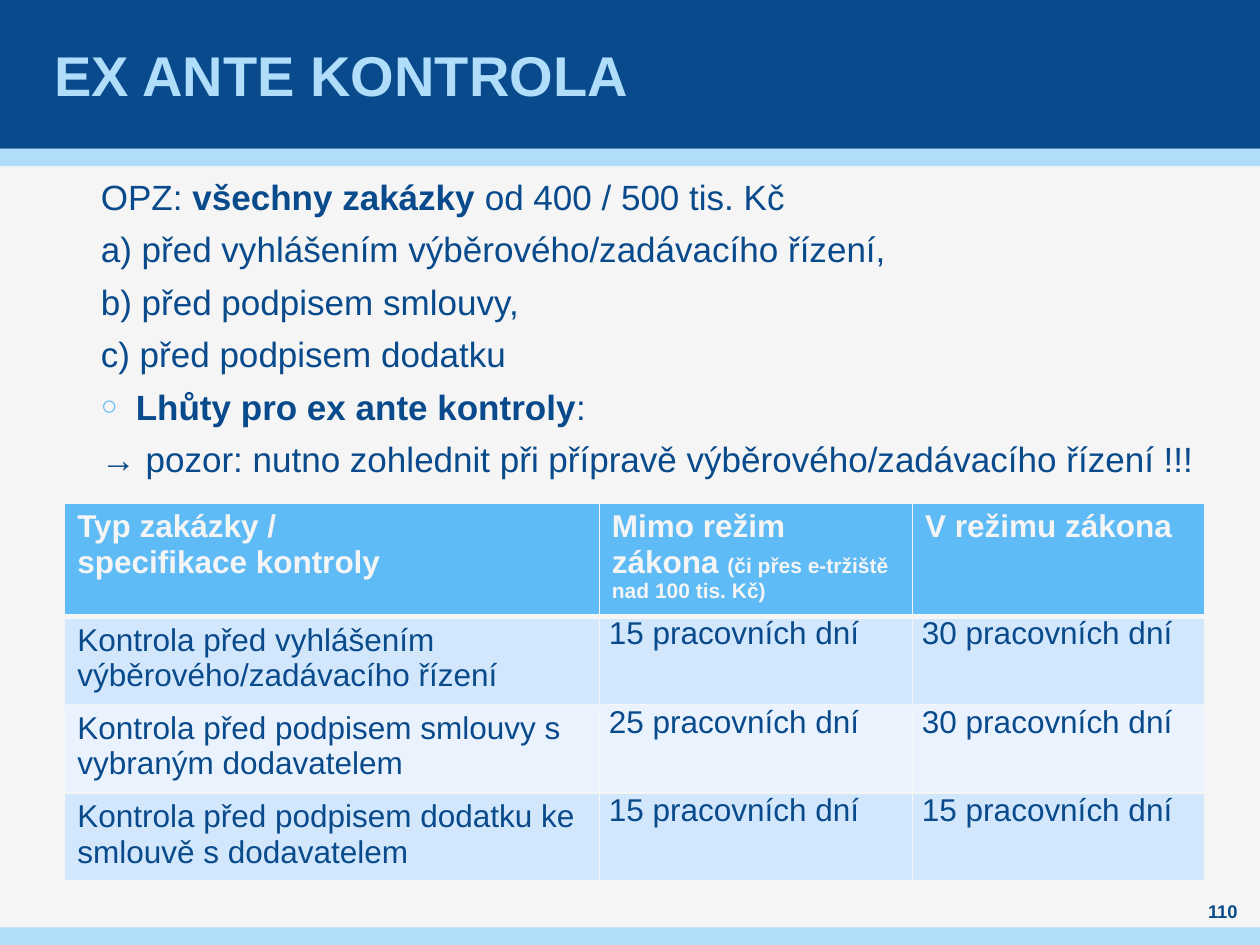
from lxml import etree
from pptx import Presentation
from pptx import util as u
from pptx.dml import color
from pptx.enum import shapes, text
from pptx.oxml import ns

Pt = u.Pt
NAVY, SKY, BLUE, PALE = "084A8B", "AFDDFA", "5FBBF5", "F5F5F5"


def rgb(value):
    return color.RGBColor.from_string(value)


def add_runs(paragraph, runs, shade):
    for content, size, bold in runs:
        run = paragraph.add_run()
        run.text = content
        run.font.color.rgb = rgb(shade)
        for name, value in {"name": "Arial", "size": Pt(size), "bold": bold}.items():
            setattr(run.font, name, value)


presentation = Presentation()
presentation.slide_width, presentation.slide_height = Pt(720), Pt(540)
slide = presentation.slides.add_slide(presentation.slide_layouts[6])
slide.background.fill.solid()
slide.background.fill.fore_color.rgb = rgb(PALE)

for top, height, fill in [(85, 10, SKY), (0, 85, NAVY), (530, 10, SKY)]:
    band = slide.shapes.add_shape(shapes.MSO_SHAPE.RECTANGLE, 0, Pt(top), Pt(720), Pt(height))
    band.shadow.inherit = False
    band.fill.solid()
    band.fill.fore_color.rgb = rgb(fill)
    band.line.fill.background()

body = [
    [("OPZ: ", 20, False), ("všechny zakázky ", 20, True), ("od 400 / 500 tis. Kč", 20, False)],
    [("a) před vyhlášením výběrového/zadávacího řízení,", 20, False)],
    [("b) před podpisem smlouvy,", 20, False)],
    [("c) před podpisem dodatku", 20, False)],
    [("Lhůty pro ex ante kontroly", 20, True), (":", 20, False)],
    [("→ pozor: nutno zohlednit při přípravě výběrového/zadávacího řízení !!!", 20, False)],
]
middle, upper = text.MSO_ANCHOR.MIDDLE, text.MSO_ANCHOR.TOP
left_align, center = text.PP_ALIGN.LEFT, text.PP_ALIGN.CENTER
body_format = {"line_spacing": Pt(24), "space_before": Pt(3), "space_after": Pt(3)}
boxes = [
    ((28, 0, 663, 85), 3, middle, left_align, SKY, {}, [[("EX ANTE KONTROLA", 32, True)]]),
    ((25.2, 100, 674.8, 170), 0, upper, left_align, NAVY, body_format, body),
    ((680.4, 513.4, 36.7, 14.4), 0, middle, center, NAVY, {}, [[("110", 10.5, True)]]),
]
for place, inset, anchor, align, shade, spacing, lines in boxes:
    box = slide.shapes.add_textbox(*map(Pt, place))
    frame = box.text_frame
    settings = {"word_wrap": True, "vertical_anchor": anchor, "margin_left": Pt(inset),
                "margin_right": Pt(inset), "margin_top": 0, "margin_bottom": 0}
    for name, value in settings.items():
        setattr(frame, name, value)
    for index, runs in enumerate(lines):
        paragraph = frame.paragraphs[0] if index == 0 else frame.add_paragraph()
        paragraph.alignment = align
        for name, value in spacing.items():
            setattr(paragraph, name, value)
        add_runs(paragraph, runs, shade)
        if lines is body:
            properties = paragraph._p.get_or_add_pPr()
            bulleted = index == 4
            properties.set("marL", str(Pt(52.4 if bulleted else 32.4)))
            properties.set("indent", str(Pt(-20 if bulleted else 0)))
            if bulleted:
                bullet_color = etree.SubElement(properties, ns.qn("a:buClr"))
                etree.SubElement(bullet_color, ns.qn("a:srgbClr"), val=BLUE)
                etree.SubElement(properties, ns.qn("a:buSzPct"), val="80000")
                etree.SubElement(properties, ns.qn("a:buFont"), typeface="Arial")
                etree.SubElement(properties, ns.qn("a:buChar"), char="○")

header = [
    [[("Typ zakázky /", 18, True)], [("specifikace kontroly", 18, True)]],
    [[("Mimo režim zákona ", 18, True), ("(či přes e-tržiště nad 100 tis. Kč)", 12, True)]],
    [[("V režimu zákona", 18, True)]],
]
deadlines = [
    ("Kontrola před vyhlášením výběrového/zadávacího řízení", 15, 30),
    ("Kontrola před podpisem smlouvy s vybraným dodavatelem", 25, 30),
    ("Kontrola před podpisem dodatku ke smlouvě s dodavatelem", 15, 15),
]
rows = [header]
for control, *days in deadlines:
    labels = [control] + [f"{count} pracovních dní" for count in days]
    rows.append([[[(label, 18, False)]] for label in labels])

widths, heights = [305.5, 179, 167], [60, 47.6, 47.6, 47.6]
table = slide.shapes.add_table(4, 3, Pt(37), Pt(287.4), Pt(sum(widths)), Pt(sum(heights))).table
for column, width in zip(table.columns, widths):
    column.width = Pt(width)
for row, height in zip(table.rows, heights):
    row.height = Pt(height)
fills = [BLUE, "D2E7FB", "EAF3FD", "D2E7FB"]
for row_index, row in enumerate(rows):
    for column_index, lines in enumerate(row):
        cell = table.cell(row_index, column_index)
        deadline = row_index > 0 and column_index > 0
        side, vertical = (5.4, 0) if deadline else (7.2, 3.6)
        margins = {"margin_left": side, "margin_right": side,
                   "margin_top": vertical, "margin_bottom": vertical}
        for name, value in margins.items():
            setattr(cell, name, Pt(value))
        for edge in ("lnL", "lnR", "lnT", "lnB"):
            thick = (row_index, edge) in [(0, "lnB"), (1, "lnT")]
            border = etree.SubElement(cell._tc.get_or_add_tcPr(), ns.qn(f"a:{edge}"),
                                      w=str(Pt(3 if thick else 1)))
            border_fill = etree.SubElement(border, ns.qn("a:solidFill"))
            etree.SubElement(border_fill, ns.qn("a:srgbClr"), val=PALE)
        cell.fill.solid()
        cell.fill.fore_color.rgb = rgb(fills[row_index])
        for index, runs in enumerate(lines):
            frame = cell.text_frame
            paragraph = frame.paragraphs[0] if index == 0 else frame.add_paragraph()
            if deadline:
                paragraph.space_before = paragraph.space_after = Pt(3)
            add_runs(paragraph, runs, NAVY if row_index else PALE)

presentation.save("out.pptx")
